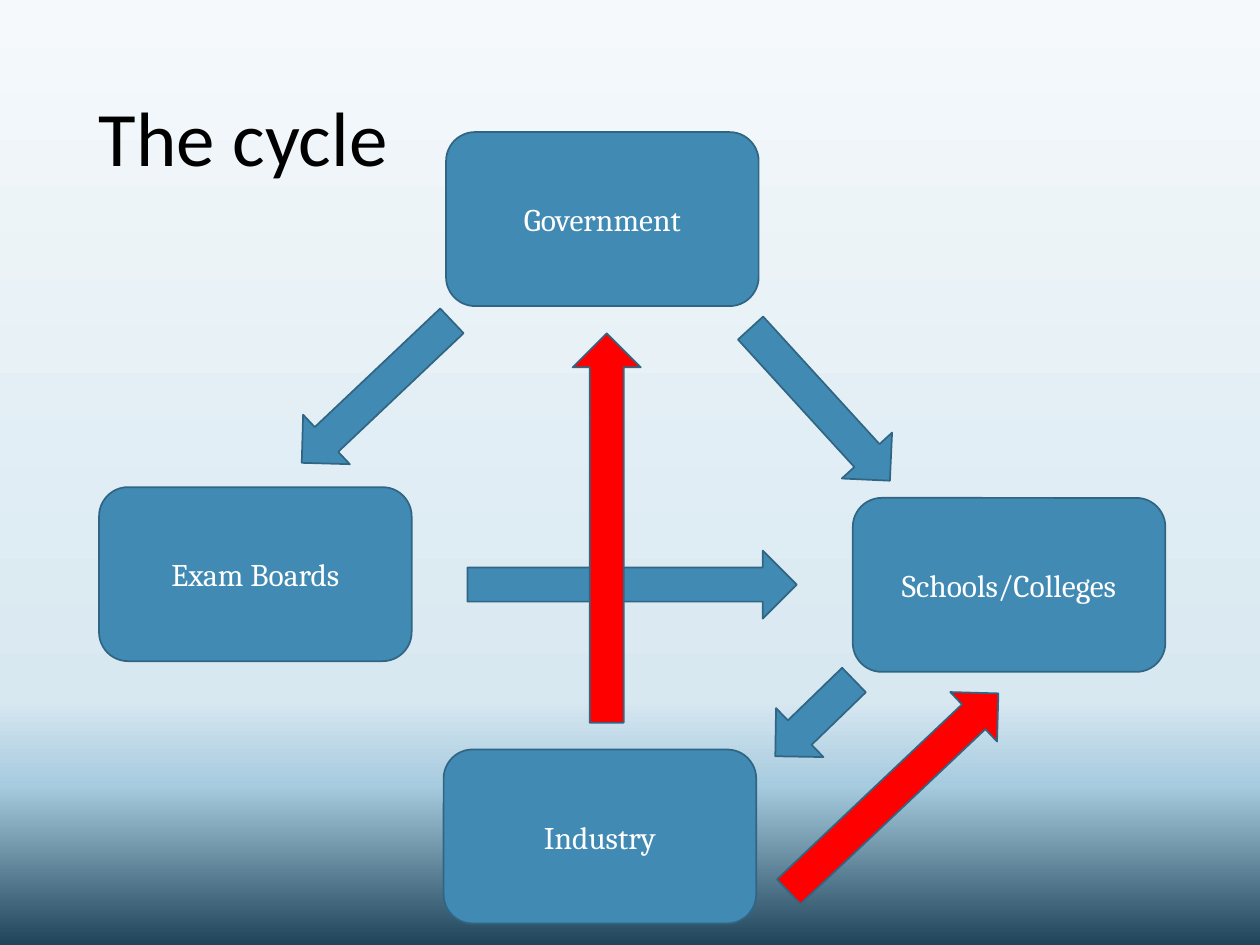
from copy import deepcopy
from dataclasses import dataclass

from pptx import Presentation
from pptx.dml.color import RGBColor
from pptx.enum.shapes import MSO_SHAPE as Preset
from pptx.enum.text import MSO_ANCHOR as Anchor, PP_ALIGN as Align
from pptx.shapes.autoshape import Shape
from pptx.slide import Slide
from pptx.util import Pt


@dataclass(frozen=True)
class Theme:
    blue: str = "418AB3"
    red: str = "FF0000"
    outline: str = "306684"
    title_color: str = "000000"
    label_color: str = "FFFFFF"
    title_font: str = "Calibri"
    label_font: str = "Cambria"
    title_size: float = 44
    label_size: float = 18
    line_width: float = 1
    backdrop: tuple = ((0, "F5F9FB"), (0.74, "D8E8F1"),
                       (0.83, "A7CBDF"), (1, "20455A"))


@dataclass(frozen=True)
class Party:
    label: str
    left: float
    top: float


@dataclass(frozen=True)
class Influence:
    """An arrow given by its centre, length and clockwise angle."""
    center_x: float
    center_y: float
    length: float
    angle: float
    color: str


THEME = Theme()
PARTY_WIDTH, PARTY_HEIGHT = 178.6, 99.4
ARROW_HEIGHT = 38.9

PARTIES = (
    Party("Schools/Colleges", 487.3, 284.5),
    Party("Government", 254.9, 75.5),
    Party("Exam Boards", 56.6, 278.4),
    Party("Industry", 253.5, 428.3),
)
INFLUENCES = (
    Influence(468.7, 231.1, 118.1, 47.6, THEME.blue),
    Influence(215.3, 223.9, 118.1, 136.6, THEME.blue),
    Influence(361.2, 334.1, 188.2, 0, THEME.blue),
    Influence(465.5, 410.4, 62.6, 135.9, THEME.blue),
    Influence(346.7, 301.7, 222.5, 270, THEME.red),
    Influence(510.6, 452.9, 164.9, 316.6, THEME.red),
)


def paint_backdrop(slide: Slide) -> None:
    fill = slide.background.fill
    fill.gradient()
    fill.gradient_angle = 270
    stop_list = slide.element.xpath(".//a:gsLst")[0]
    while len(stop_list) < len(THEME.backdrop):
        stop_list.append(deepcopy(stop_list[0]))
    for stop, (position, color) in zip(fill.gradient_stops, THEME.backdrop):
        stop.position = position
        stop.color.rgb = RGBColor.from_string(color)


def write(shape: Shape, wording: str, align: Align, font: dict, color: str) -> None:
    frame = shape.text_frame
    frame.word_wrap = True
    frame.vertical_anchor = Anchor.MIDDLE
    paragraph = frame.paragraphs[0]
    paragraph.alignment = align
    run = paragraph.add_run()
    run.text = wording
    for attribute, value in font.items():
        setattr(run.font, attribute, value)
    run.font.color.rgb = RGBColor.from_string(color)


def paint(shape: Shape, color: str) -> None:
    shape.shadow.inherit = False
    shape.fill.solid()
    shape.fill.fore_color.rgb = RGBColor.from_string(color)
    shape.line.color.rgb = RGBColor.from_string(THEME.outline)
    shape.line.width = Pt(THEME.line_width)


def add_title(slide: Slide, wording: str) -> None:
    title = slide.shapes.add_textbox(Pt(49.5), Pt(28.8), Pt(621), Pt(104.4))
    write(title, wording, Align.LEFT,
          {"name": THEME.title_font, "size": Pt(THEME.title_size)}, THEME.title_color)
    title.text_frame.paragraphs[0].line_spacing = 0.9


def add_party(slide: Slide, party: Party) -> None:
    box = slide.shapes.add_shape(Preset.ROUNDED_RECTANGLE, Pt(party.left), Pt(party.top),
                                 Pt(PARTY_WIDTH), Pt(PARTY_HEIGHT))
    paint(box, THEME.blue)
    write(box, party.label, Align.CENTER,
          {"name": THEME.label_font, "size": Pt(THEME.label_size)}, THEME.label_color)


def add_influence(slide: Slide, influence: Influence) -> None:
    arrow = slide.shapes.add_shape(
        Preset.RIGHT_ARROW,
        Pt(influence.center_x - influence.length / 2),
        Pt(influence.center_y - ARROW_HEIGHT / 2),
        Pt(influence.length), Pt(ARROW_HEIGHT))
    arrow.rotation = influence.angle
    paint(arrow, influence.color)


def main() -> None:
    deck = Presentation()
    deck.slide_width, deck.slide_height = Pt(720), Pt(540)
    slide = deck.slides.add_slide(deck.slide_layouts[6])
    paint_backdrop(slide)
    add_title(slide, "The cycle")
    for party in PARTIES:
        add_party(slide, party)
    for influence in INFLUENCES:
        add_influence(slide, influence)
    deck.save("out.pptx")


if __name__ == "__main__":
    main()
